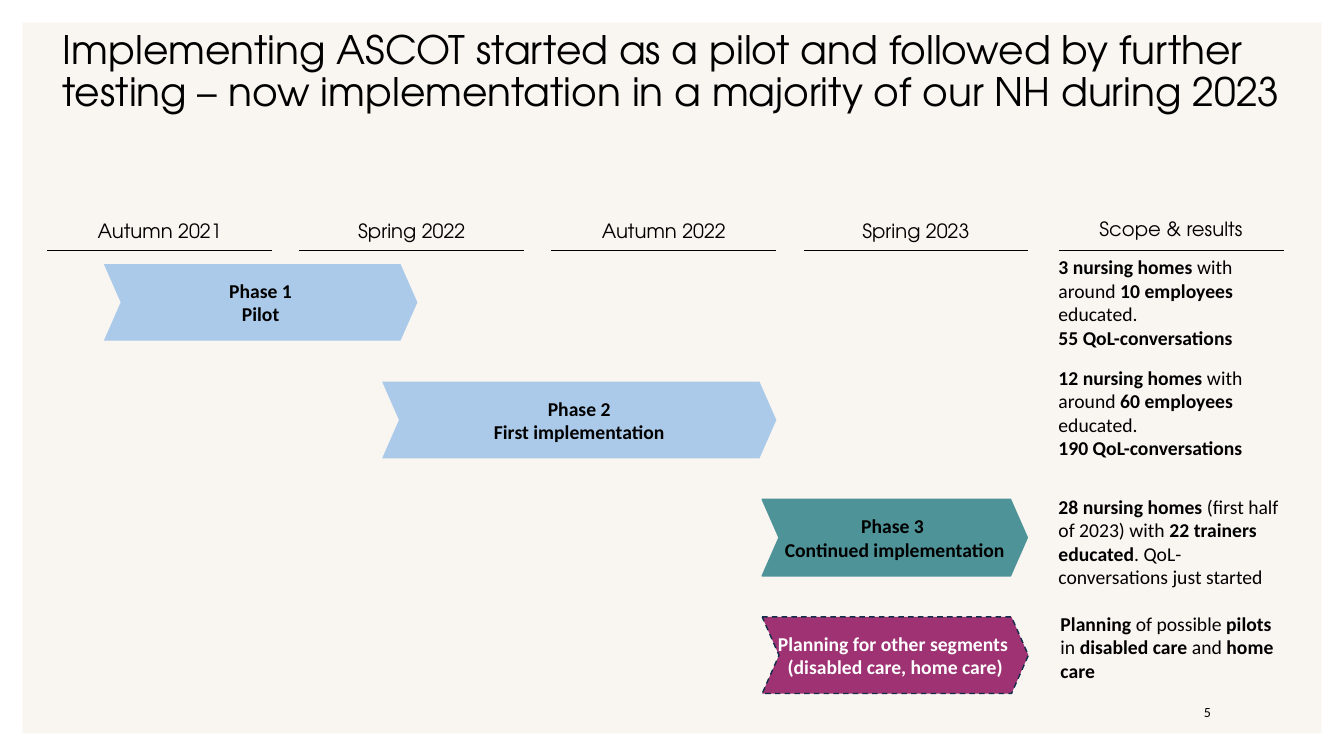
from dataclasses import dataclass
from lxml.etree import SubElement
from pptx import Presentation
from pptx.dml.color import RGBColor as RGB
from pptx.enum.dml import MSO_LINE as Dash
from pptx.enum.shapes import MSO_CONNECTOR as Link, MSO_SHAPE as Shape
from pptx.enum.text import MSO_ANCHOR as Anchor, PP_ALIGN as Align
from pptx.oxml.ns import qn
from pptx.util import Inches, Pt


@dataclass(frozen=True)
class Theme:
    """Colours, fonts and type sizes of the slide."""
    cream: str = "F9F5F0"
    white: str = "FFFFFF"
    black: str = "000000"
    blue: str = "ABCAEA"
    teal: str = "4E9398"
    plum: str = "9E3272"
    navy: str = "122D49"
    head: str = "TeX Gyre Adventor"
    body: str = "Calibri"
    title: int = 28
    text: int = 14
    small: int = 10


T = Theme()
TIMES = ["Autumn 2021", "Spring 2022", "Autumn 2022", "Spring 2023"]
PHASES = [
    (1.03, 3.11, "Phase 1\nPilot", T.blue, T.black, None, None),
    (3.79, 3.91, "Phase 2\nFirst implementation", T.blue, T.black, None, None),
    (7.56, 2.63, "Phase 3 \nContinued implementation",
     T.teal, T.black, T.teal, None),
    (7.56, 2.64, "Planning for other segments \n(disabled care, home care)",
     T.plum, T.white, T.navy, Dash.DASH),
]
NOTES = [
    (10.4, 2.62, 0.76, "3 nursing homes |with around |10 employees "
     "|educated. \n|55 QoL-conversations"),
    (10.4, 3.72, 0.75, "12 nursing homes |with around |60 employees "
     "|educated. \n|190 QoL-conversations"),
    (10.4, 5.04, 0.67, "28 nursing homes |(first half of 2023) with "
     "|22 trainers educated|. QoL-conversations just started"),
    (10.42, 6.18, 0.48, "Planning |of possible |pilots |in "
     "|disabled care |and |home care"),
]


def apply(item, values):
    """Set each named format value on an item."""
    for name, value in values.items():
        setattr(item, name, value)


def write(frame, text, size=T.text, name=T.body, color=T.black, bold=True,
          align=Align.LEFT, space=1.0, wrap=True, pad=(0.1, 0.05)):
    """Write text whose weight switches at each bar."""
    side, edge = map(Inches, pad)
    apply(frame, dict(word_wrap=wrap, vertical_anchor=Anchor.MIDDLE,
                      margin_left=side, margin_right=side,
                      margin_top=edge, margin_bottom=edge))
    para = frame.paragraphs[0]
    apply(para, dict(alignment=align, line_spacing=space))
    for turn, piece in enumerate(text.split("|")):
        for row, line in enumerate(piece.split("\n")):
            if row:
                para.add_line_break()
            if line:
                run = para.add_run()
                run.text = line
                apply(run.font, dict(size=Pt(size), name=name,
                                     bold=bold == (turn % 2 == 0)))
                run.font.color.rgb = RGB.from_string(color)


def label(slide, box, text, **style):
    """Add a text box."""
    area = slide.shapes.add_textbox(*map(Inches, box))
    write(area.text_frame, text, **style)


def block(slide, kind, box, adj, fill, edge=None, dash=None):
    """Add a filled shape with an optional outline."""
    shape = slide.shapes.add_shape(kind, *map(Inches, box))
    shape.shadow.inherit = False
    shape.adjustments[0] = adj
    shape.fill.solid()
    shape.fill.fore_color.rgb = RGB.from_string(fill)
    if edge:
        shape.line.color.rgb = RGB.from_string(edge)
        apply(shape.line, dict(width=Pt(1), dash_style=dash))
    else:
        shape.line.fill.background()
    return shape


def header(slide, left, top, high, text):
    """Add a column heading over a thin rule."""
    wide = 2.23
    label(slide, (left, top, wide, high), text,
          name=T.head, bold=False, align=Align.CENTER)
    ends = map(Inches, (left, 2.48, left + wide, 2.48))
    rule = slide.shapes.add_connector(Link.STRAIGHT, *ends)
    rule.line.color.rgb = RGB.from_string(T.black)
    rule.line.width = Pt(0.5)
    SubElement(rule.element.spPr, qn("a:effectLst"))


def phase(slide, row, left, wide, text, fill, color, edge, dash):
    """Add a phase chevron on its timeline row."""
    box = (left, 2.62 + row * 1.167, wide, 0.76)
    arrow = block(slide, Shape.CHEVRON, box, 0.22, fill, edge, dash)
    write(arrow.text_frame, text, color=color, align=Align.CENTER,
          wrap=False, pad=(0.04, 0))


def main():
    """Build and save the timeline slide."""
    deck = Presentation()
    apply(deck, dict(slide_width=Inches(13.33), slide_height=Inches(7.5)))
    slide = deck.slides.add_slide(deck.slide_layouts[6])
    back = slide.background.fill
    back.solid()
    back.fore_color.rgb = RGB.from_string(T.cream)
    block(slide, Shape.FRAME, (0, 0, 13.33, 7.5), 0.03, T.white)
    label(slide, (0.62, 0.25, 12.27, 0.95),
          "Implementing ASCOT started as a pilot and followed by further "
          "testing – now implementation in a majority of our NH during 2023",
          size=T.title, name=T.head, bold=False, space=0.9, pad=(0, 0))
    for col, time in enumerate(TIMES):
        header(slide, 0.47 + col * 2.5, 2.1, 0.38, time)
    header(slide, 10.5, 2.13, 0.28, "Scope & results")
    for row, item in enumerate(PHASES):
        phase(slide, row, *item)
    for left, top, high, text in NOTES:
        label(slide, (left, top, 2.47, high), text)
    label(slide, (11.66, 6.84, 0.39, 0.45), "5", size=T.small, bold=False,
          align=Align.RIGHT, pad=(0.04, 0.04))
    deck.save("out.pptx")


if __name__ == "__main__":
    main()
